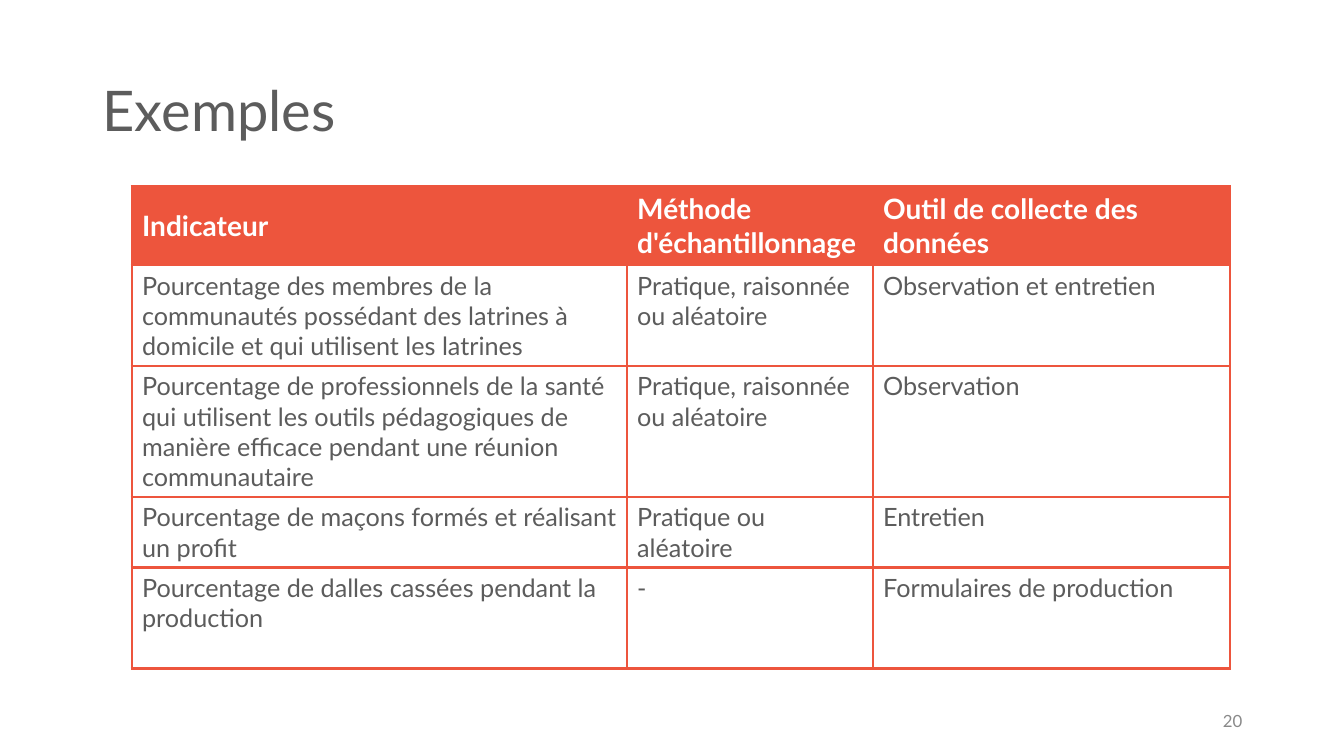
from dataclasses import dataclass

from lxml import etree
from pptx import Presentation
from pptx import util as u
from pptx.dml.color import RGBColor
from pptx.enum import text
from pptx.oxml import ns


@dataclass(frozen=True)
class Theme:
    font: str = "Lato"
    accent: str = "ED553D"
    body: str = "5C5C5C"
    muted: str = "898989"
    light: str = "FFFFFF"
    title_size: int = 40
    header_size: int = 20
    body_size: int = 18
    number_size: int = 12
    border_width: float = 2.25


@dataclass(frozen=True)
class Label:
    words: str
    box: tuple[float, float, float, float]
    size: int
    color: str
    align: text.PP_ALIGN = text.PP_ALIGN.LEFT
    line_spacing: float = 1.0


@dataclass(frozen=True)
class Row:
    height: float
    cells: tuple[str, str, str]


THEME = Theme()
LABELS = [
    Label("Exemples", (0.92, 0.4, 11.5, 1.45), THEME.title_size, THEME.body, line_spacing=0.9),
    Label("20", (9.42, 6.95, 3, 0.4), THEME.number_size, THEME.muted, text.PP_ALIGN.RIGHT),
]
TABLE_LEFT, TABLE_TOP = 1.31, 1.85
COLUMN_WIDTHS = (4.91, 2.44, 3.54)
ROWS = [
    Row(0.78, ("Indicateur", "Méthode d'échantillonnage", "Outil de collecte des données")),
    Row(1.0, ("Pourcentage des membres de la communautés possédant des latrines à domicile "
              "et qui utilisent les latrines",
              "Pratique, raisonnée ou aléatoire", "Observation et entretien")),
    Row(1.3, ("Pourcentage de professionnels de la santé qui utilisent les outils pédagogiques "
              "de manière efficace pendant une réunion communautaire",
              "Pratique, raisonnée ou aléatoire", "Observation")),
    Row(0.7, ("Pourcentage de maçons formés et réalisant un profit",
              "Pratique ou aléatoire", "Entretien")),
    Row(1.0, ("Pourcentage de dalles cassées pendant la production",
              "-", "Formulaires de production")),
]


def write(paragraph, words: str, size: int, color: str, bold: bool = False) -> None:
    run = paragraph.add_run()
    run.text = words
    formats = {"name": THEME.font, "size": u.Pt(size), "bold": bold}
    for name, value in formats.items():
        setattr(run.font, name, value)
    run.font.color.rgb = RGBColor.from_string(color)


def draw_label(slide, label: Label) -> None:
    frame = slide.shapes.add_textbox(*map(u.Inches, label.box)).text_frame
    frame.word_wrap = True
    frame.vertical_anchor = text.MSO_ANCHOR.MIDDLE
    paragraph = frame.paragraphs[0]
    paragraph.alignment = label.align
    paragraph.line_spacing = label.line_spacing
    write(paragraph, label.words, label.size, label.color)


def add_borders(cell) -> None:
    # Border elements must come before the fill element
    properties = cell._tc.get_or_add_tcPr()
    for index, side in enumerate(("a:lnL", "a:lnR", "a:lnT", "a:lnB")):
        line = etree.Element(ns.qn(side), w=str(u.Pt(THEME.border_width)))
        fill = etree.SubElement(line, ns.qn("a:solidFill"))
        etree.SubElement(fill, ns.qn("a:srgbClr"), val=THEME.accent)
        properties.insert(index, line)


def draw_cell(cell, words: str, is_header: bool) -> None:
    paragraph = cell.text_frame.paragraphs[0]
    if is_header:
        cell.vertical_anchor = text.MSO_ANCHOR.MIDDLE
        cell.fill.solid()
        cell.fill.fore_color.rgb = RGBColor.from_string(THEME.accent)
        write(paragraph, words, THEME.header_size, THEME.light, bold=True)
    else:
        cell.fill.background()
        write(paragraph, words, THEME.body_size, THEME.body)
    add_borders(cell)


def draw_table(slide, rows: list[Row]) -> None:
    size = (sum(COLUMN_WIDTHS), sum(row.height for row in rows))
    table = slide.shapes.add_table(
        len(rows), len(COLUMN_WIDTHS), *map(u.Inches, (TABLE_LEFT, TABLE_TOP, *size))).table
    table.horz_banding = False
    for column, width in zip(table.columns, COLUMN_WIDTHS):
        column.width = u.Inches(width)
    for row_index, row in enumerate(rows):
        table.rows[row_index].height = u.Inches(row.height)
        for column_index, words in enumerate(row.cells):
            draw_cell(table.cell(row_index, column_index), words, row_index == 0)


def main() -> None:
    presentation = Presentation()
    presentation.slide_width = u.Inches(13.33)
    presentation.slide_height = u.Inches(7.5)
    slide = presentation.slides.add_slide(presentation.slide_layouts[6])

    # Title and page number
    for label in LABELS:
        draw_label(slide, label)

    # Indicator table
    draw_table(slide, ROWS)

    presentation.save("out.pptx")


if __name__ == "__main__":
    main()
